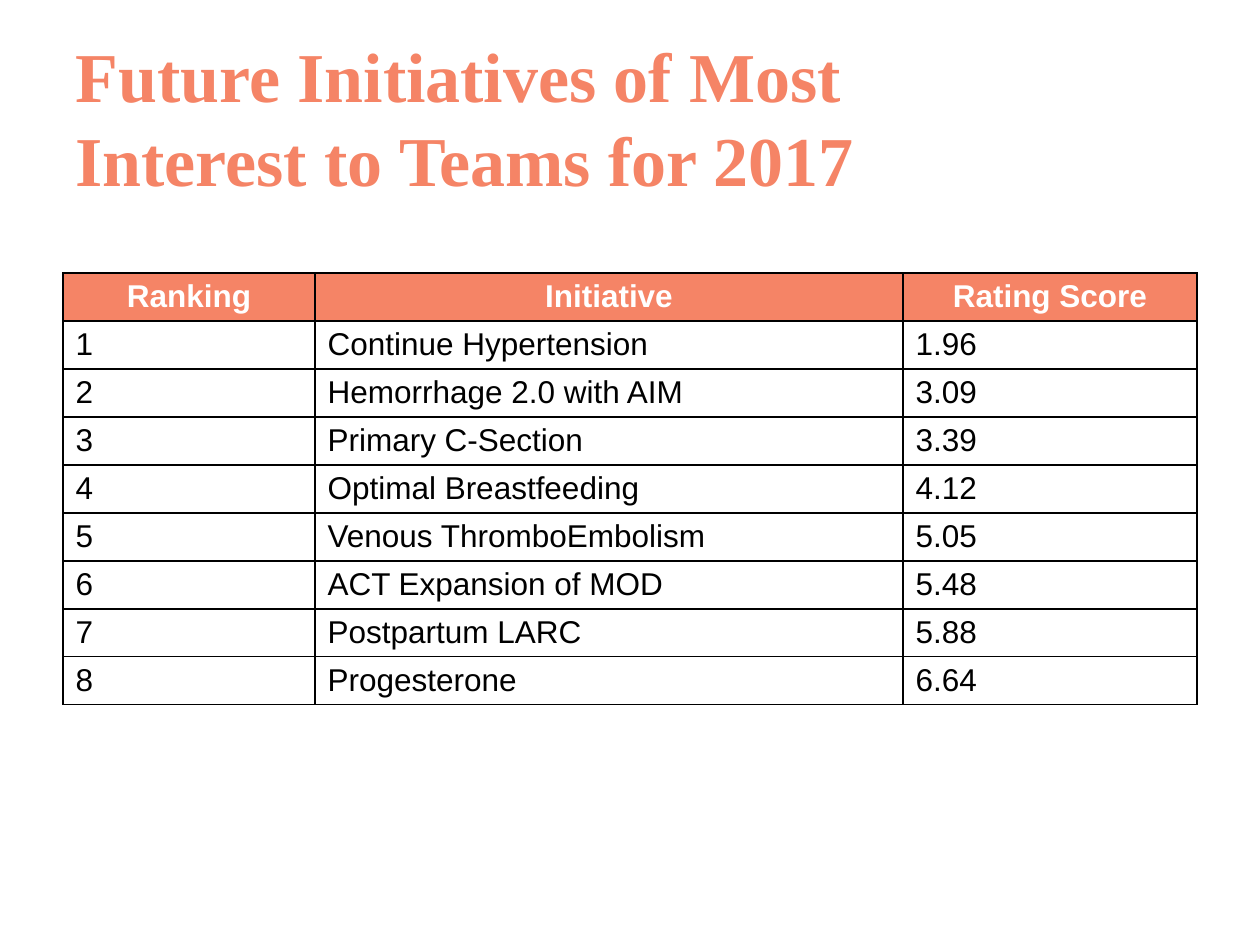
from lxml.etree import SubElement
from pptx import Presentation
from pptx.dml.color import RGBColor
from pptx.enum.text import MSO_ANCHOR, PP_ALIGN
from pptx.oxml.ns import qn
from pptx.util import Emu, Pt

PX_PER_INCH = 126
CORAL, WHITE, BLACK = "F58466", "FFFFFF", "000000"

TITLE = "Future Initiatives of Most \vInterest to Teams for 2017"
HEADINGS = ("Ranking", "Initiative", "Rating Score")
INITIATIVES = [
    ("Continue Hypertension", "1.96"),
    ("Hemorrhage 2.0 with AIM", "3.09"),
    ("Primary C-Section", "3.39"),
    ("Optimal Breastfeeding", "4.12"),
    ("Venous ThromboEmbolism", "5.05"),
    ("ACT Expansion of MOD", "5.48"),
    ("Postpartum LARC", "5.88"),
    ("Progesterone", "6.64"),
]
COLUMN_WIDTHS = (252, 588, 294)
ROW_HEIGHT = 48


def px(length):
    return Emu(round(length * 914400 / PX_PER_INCH))


def color(hex_string):
    return RGBColor.from_string(hex_string)


def format_text(para, font_name, size, hex_string, bold):
    for span in para.runs:
        span.font.name = font_name
        span.font.size = Pt(size)
        span.font.bold = bold
        span.font.color.rgb = color(hex_string)


def add_borders(cell):
    properties = cell._tc.get_or_add_tcPr()
    for index, side in enumerate(("lnL", "lnR", "lnT", "lnB")):
        line = properties.makeelement(qn(f"a:{side}"), {"w": str(Pt(1))})
        fill = SubElement(line, qn("a:solidFill"))
        SubElement(fill, qn("a:srgbClr"), val=BLACK)
        properties.insert(index, line)


def place_title(page, left, top, width, height):
    title = page.shapes.title
    title.left, title.top = px(left), px(top)
    title.width, title.height = px(width), px(height)
    frame = title.text_frame
    frame.word_wrap = True
    frame.vertical_anchor = MSO_ANCHOR.MIDDLE
    para = frame.paragraphs[0]
    para.text = TITLE
    para.alignment = PP_ALIGN.LEFT
    para.line_spacing = Pt(48)
    format_text(para, "Times New Roman", 40, CORAL, True)


def fill_cell(cell, text, is_heading):
    para = cell.text_frame.paragraphs[0]
    para.text = text
    if is_heading:
        para.alignment = PP_ALIGN.CENTER
        cell.fill.solid()
        cell.fill.fore_color.rgb = color(CORAL)
    else:
        cell.fill.background()
    format_text(para, "Arial", 18, WHITE if is_heading else BLACK, is_heading)
    add_borders(cell)


def add_ranking_table(page, left, top):
    rows = [HEADINGS]
    rows += [(str(rank), *entry) for rank, entry in enumerate(INITIATIVES, 1)]
    table = page.shapes.add_table(
        len(rows), len(HEADINGS), px(left), px(top),
        px(sum(COLUMN_WIDTHS)), px(ROW_HEIGHT * len(rows)),
    ).table
    table.horz_banding = False
    for column, width in zip(table.columns, COLUMN_WIDTHS):
        column.width = px(width)
    for row_index, texts in enumerate(rows):
        table.rows[row_index].height = px(ROW_HEIGHT)
        for column_index, text in enumerate(texts):
            fill_cell(table.cell(row_index, column_index), text, row_index == 0)


def main():
    deck = Presentation()
    deck.slide_width, deck.slide_height = px(1260), px(945)
    page = deck.slides.add_slide(deck.slide_layouts[5])
    place_title(page, 63, 38, 1134, 157)
    add_ranking_table(page, 63, 273)
    deck.save("out.pptx")


if __name__ == "__main__":
    main()
